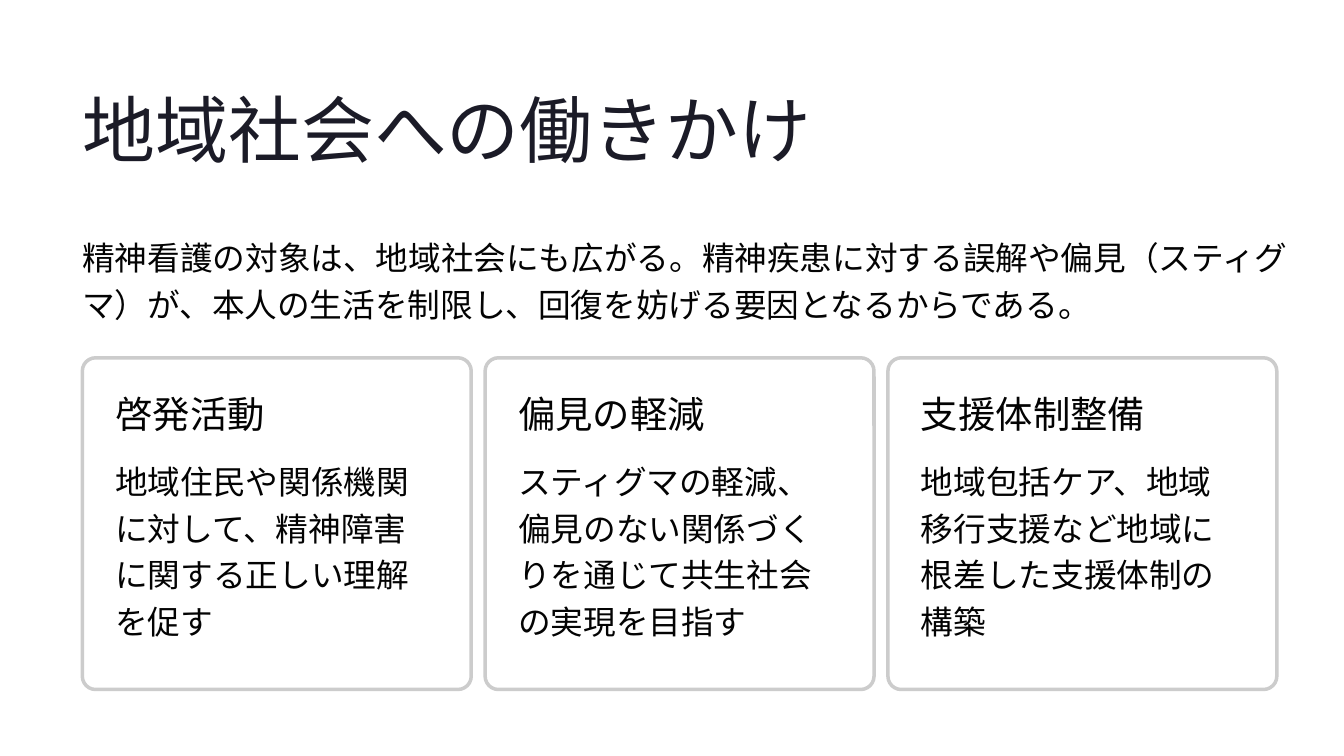
from lxml import etree
from pptx import Presentation
from pptx import util as u
from pptx.dml.color import RGBColor
from pptx.enum import shapes, text
from pptx.oxml.ns import qn

NAVY = RGBColor(0x1B, 0x1B, 0x27)
INK = RGBColor(0x03, 0x03, 0x03)
WHITE = RGBColor(0xFF, 0xFF, 0xFF)
GREY = RGBColor(0xCC, 0xCC, 0xCC)

TITLE = "地域社会への働きかけ"
LEAD = (
    "精神看護の対象は、地域社会にも広がる。精神疾患に対する誤解や偏見（スティグマ）が、"
    "本人の生活を制限し、回復を妨げる要因となるからである。"
)
CARDS = [
    ("啓発活動", "地域住民や関係機関に対して、精神障害に関する正しい理解を促す"),
    ("偏見の軽減", "スティグマの軽減、偏見のない関係づくりを通じて共生社会の実現を目指す"),
    ("支援体制整備", "地域包括ケア、地域移行支援など地域に根差した支援体制の構築"),
]


def place(sp, left, top, width, height):
    sp.left, sp.top = u.Cm(left), u.Cm(top)
    sp.width, sp.height = u.Cm(width), u.Cm(height)


def write(sp, words, font, size, spacing, color, wrap=True):
    tf = sp.text_frame
    tf.margin_left = tf.margin_top = tf.margin_right = tf.margin_bottom = 0
    tf.auto_size = text.MSO_AUTO_SIZE.NONE
    tf.vertical_anchor = text.MSO_ANCHOR.TOP
    tf.word_wrap = wrap
    p = tf.paragraphs[0]
    p.alignment = text.PP_ALIGN.LEFT
    p.line_spacing = u.Pt(spacing)
    p.space_before = u.Pt(0)
    r = p.add_run()
    r.text = words
    r.font.name = font
    r.font.size = u.Pt(size)
    r.font.color.rgb = color
    latin = r.font._element.find(qn("a:latin"))
    ea = etree.Element(qn("a:ea"), typeface=font)
    latin.addnext(ea)


def add_text(s, box, *style, **options):
    sp = s.shapes.add_textbox(0, 0, 0, 0)
    place(sp, *box)
    write(sp, *style, **options)


def add_title(s, left, top, width, height):
    sp = s.shapes.title
    place(sp, left, top, width, height)
    write(sp, TITLE, "Inter", 62.5, 78.5, NAVY, wrap=False)


def add_lead(s, *box):
    add_text(s, box, LEAD, "Cabin", 28, 40, INK)


def add_card(s, left, top, width, height, heading, body):
    sp = s.shapes.add_shape(shapes.MSO_SHAPE.ROUNDED_RECTANGLE, 0, 0, 0, 0)
    place(sp, left, top, width, height)
    sp.adjustments[0] = 0.04
    sp.shadow.inherit = False
    sp.fill.solid()
    sp.fill.fore_color.rgb = WHITE
    color = sp.fill._xPr.find(qn("a:solidFill"))[0]
    etree.SubElement(color, qn("a:alpha"), val="95000")
    sp.line.color.rgb = GREY
    sp.line.width = u.Pt(3)

    x, inner = left + 1, width - 2.08
    add_text(s, (x, top + 1, inner, 1.45), heading, "Inter", 32, 39, INK, wrap=False)
    add_text(s, (x, top + 2.92, inner, 5.94), body, "Cabin", 28, 40, INK)


def add_cards(s, left, top, width, height, gap=0.42):
    card_width = (width - gap * (len(CARDS) - 1)) / len(CARDS)
    for i, (heading, body) in enumerate(CARDS):
        x = left + i * (card_width + gap)
        add_card(s, x, top, card_width, height, heading, body)


def main():
    prs = Presentation()
    prs.slide_width, prs.slide_height = u.Cm(40.64), u.Cm(22.86)
    s = prs.slides.add_slide(prs.slide_layouts[5])
    add_title(s, 2.49, 2.44, 22.17, 2.77)
    add_lead(s, 2.49, 6.98, 37.11, 2.97)
    add_cards(s, 2.49, 10.82, 36.12, 10.03)
    prs.save("out.pptx")


if __name__ == "__main__":
    main()
